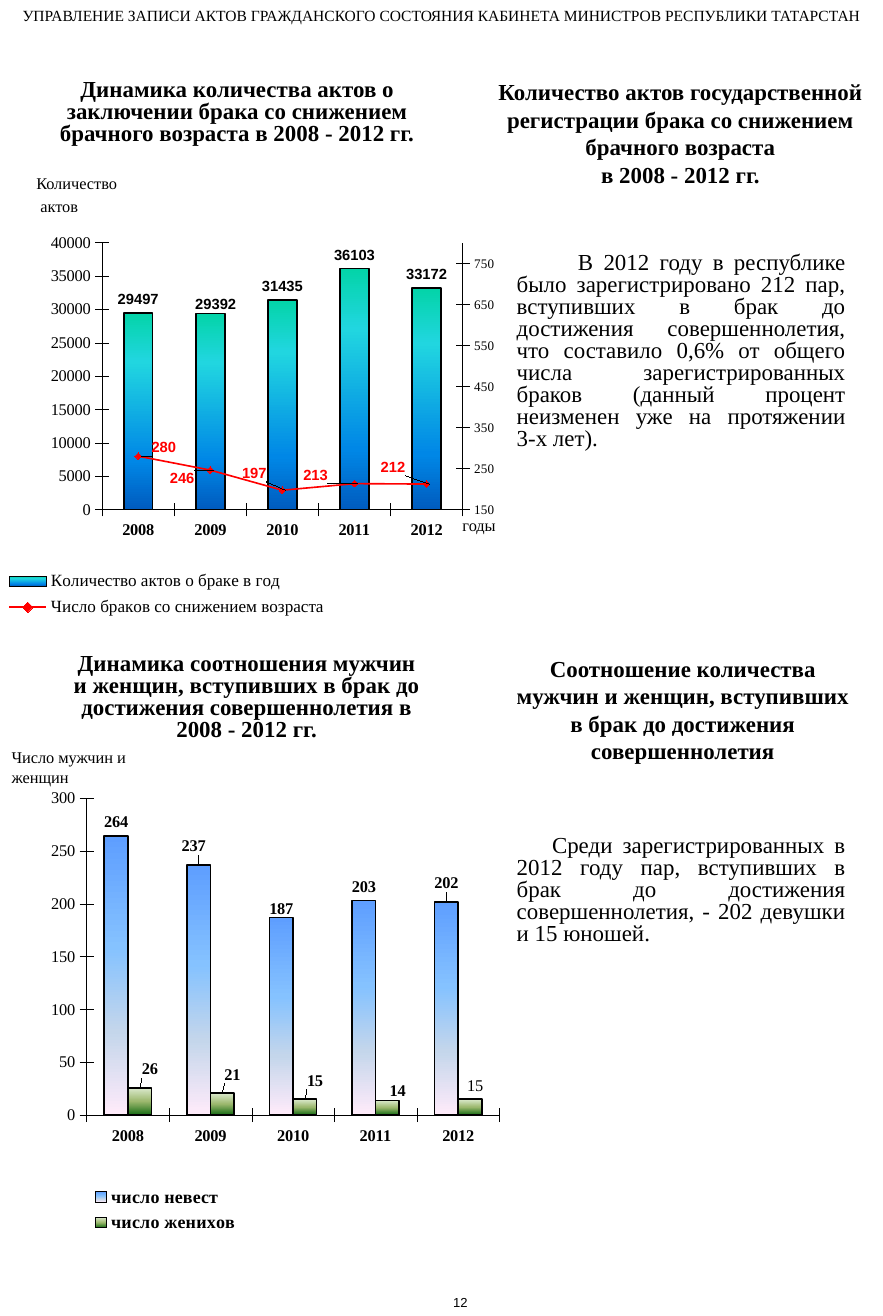
import copy

import lxml.etree
import pptx
import pptx.chart.axis
import pptx.chart.data
import pptx.dml.color
import pptx.enum.chart
import pptx.enum.text
import pptx.oxml.ns
import pptx.oxml.xmlchemy
import pptx.util

COLS, ROWS = 75, 111.8
YEARS = ["2008", "2009", "2010", "2011", "2012"]
SERIF, SANS = "Times New Roman", "Arial"
BLACK, RED = "000000", "FF0000"
ALIGN = pptx.enum.text.PP_ALIGN
SPOT = pptx.enum.chart.XL_LABEL_POSITION
qn = pptx.oxml.ns.qn


def unit(cells):
    """Turn grid cells into a length."""
    return pptx.util.Inches(cells / 10)


def paint(hue):
    """Turn a hex string into a colour."""
    return pptx.dml.color.RGBColor.from_string(hue)


def style(font, size, bold=False, face=SERIF, hue=BLACK):
    """Set size, weight, face and colour of a font."""
    font.size, font.bold, font.name = pptx.util.Pt(size), bold, face
    font.color.rgb = paint(hue)


def write(slide, box, words, size, bold=False, align=ALIGN.LEFT, space=1, gap=0, indent=0,
          face=SERIF, middle=False):
    """Place a text box whose lines share one format."""
    frame = slide.shapes.add_textbox(*map(unit, box)).text_frame
    frame.word_wrap = True
    if middle:
        frame.vertical_anchor = pptx.enum.text.MSO_ANCHOR.MIDDLE
    frame.text = words
    for row, para in enumerate(frame.paragraphs):
        para.alignment, para.line_spacing = align, space
        para.space_before = pptx.util.Pt(gap if row else 0)
        if indent:
            para._p.get_or_add_pPr().set("indent", str(unit(indent)))
        for run in para.runs:
            style(run.font, size, bold, face)


def add(node, tag, **items):
    """Append a child element with attributes."""
    return lxml.etree.SubElement(node, qn(tag), items)


def arrange(node, index, shares, inner=False, edge=True):
    """Give a chart part a manual layout in shares of the chart."""
    for old in node.findall(qn("c:layout")):
        node.remove(old)
    layout = pptx.oxml.xmlchemy.OxmlElement("c:layout")
    node.insert(index, layout)
    manual = add(layout, "c:manualLayout")
    if inner:
        add(manual, "c:layoutTarget", val="inner")
    if edge:
        add(manual, "c:xMode", val="edge")
        add(manual, "c:yMode", val="edge")
    for name, share in zip("xywh", shares):
        add(manual, "c:" + name, val=str(share))


def rule(axis, size=10, bold=False, low=None, high=None, step=None):
    """Format an axis with its font, line, ticks and scale."""
    style(axis.tick_labels.font, size, bold)
    axis.format.line.width = pptx.util.Pt(0.25)
    axis.format.line.color.rgb = paint(BLACK)
    axis.major_tick_mark = pptx.enum.chart.XL_TICK_MARK.CROSS
    axis.has_major_gridlines = False
    if step:
        axis.minimum_scale, axis.maximum_scale, axis.major_unit = low, high, step


def shade(series, node, stops):
    """Fill bars with a downward gradient and a black outline."""
    series.format.fill.gradient()
    series.format.fill.gradient_angle = 270
    ramp = node.find(qn("c:spPr")).find(".//" + qn("a:gsLst"))
    for old in list(ramp):
        ramp.remove(old)
    for share, hue in stops:
        add(add(ramp, "a:gs", pos=str(share * 1000)), "a:srgbClr", val=hue)
    series.format.line.width = pptx.util.Pt(1)
    series.format.line.color.rgb = paint(BLACK)


def label(series, node, spot, shifts, size, face=SERIF, hue=BLACK, plain=()):
    """Show values, with some labels moved by shares of the chart."""
    labels = series.data_labels
    labels.show_value, labels.position = True, spot
    style(labels.font, size, True, face, hue)
    for index, shift in shifts.items():
        tag = series.points[index].data_label
        style(tag.font, size, index not in plain, face, hue)
        tag.position = spot
    for item in node.iter(qn("c:dLbl")):
        index = int(item.find(qn("c:idx")).get("val"))
        arrange(item, 1, shifts[index], edge=False)


def plot(slide, box, data, area, key, size, bold, top, step):
    """Place a column chart and return it with its series nodes."""
    source = pptx.chart.data.CategoryChartData()
    source.categories = YEARS
    for name, values in data:
        source.add_series(name, values)
    kind = pptx.enum.chart.XL_CHART_TYPE.COLUMN_CLUSTERED
    chart = slide.shapes.add_chart(kind, *map(unit, box), source).chart
    chart.has_title, chart.has_legend = False, True
    style(chart.font, 10, face=SANS)
    chart.legend.position = pptx.enum.chart.XL_LEGEND_POSITION.BOTTOM
    chart.legend.include_in_layout = False
    style(chart.legend.font, size, bold)
    arrange(chart.element.find(".//" + qn("c:legend")), 1, key)
    arrange(chart.element.find(".//" + qn("c:plotArea")), 0, area, inner=True)
    chart.plots[0].gap_width, chart.plots[0].overlap = 150, 0
    chart.plots[0].vary_by_categories = False
    rule(chart.category_axis, bold=True)
    rule(chart.value_axis, low=0, high=top, step=step)
    return chart, chart.element.findall(".//" + qn("c:ser"))


def split(chart, node):
    """Move a series to a line on a second axis and return that axis."""
    area = chart.element.find(".//" + qn("c:plotArea"))
    bars, cat, val = (area.find(qn("c:" + t)) for t in ("barChart", "catAx", "valAx"))
    line = pptx.oxml.xmlchemy.OxmlElement("c:lineChart")
    add(line, "c:grouping", val="standard")
    add(line, "c:varyColors", val="0")
    for flag in node.findall(qn("c:invertIfNegative")):
        node.remove(flag)
    line.append(node)
    add(line, "c:marker", val="1")
    bars.addnext(line)
    cat2, val2 = copy.deepcopy(cat), copy.deepcopy(val)
    val.addnext(val2)
    val2.addnext(cat2)
    for axis, own, other in ((cat2, "1001", "1002"), (val2, "1002", "1001")):
        add(line, "c:axId", val=own)
        axis.find(qn("c:axId")).set("val", own)
        axis.find(qn("c:crossAx")).set("val", other)
    val2.find(qn("c:axPos")).set("val", "r")
    val2.find(qn("c:crosses")).set("val", "max")
    pptx.chart.axis.CategoryAxis(cat2).visible = False
    return pptx.chart.axis.ValueAxis(val2)


def acts(slide, x, y):
    """Draw the upper panel on marriages at a lowered age."""
    write(slide, (x + 3.6, y, 33.1, 6.7), "Динамика количества актов о заключении брака со снижением брачного возраста в 2008 - 2012 гг.",
          14, True, ALIGN.CENTER, 0.8)
    write(slide, (x + 40.6, y, 34.4, 10), "Количество актов государственной регистрации брака со снижением брачного возраста\vв 2008 - 2012 гг.",
          14, True, ALIGN.CENTER, middle=True)
    chart, nodes = plot(slide, (x, y + 11.8, 45.7, 36), [
        ("Количество актов о браке в год", (29497, 29392, 31435, 36103, 33172)),
        ("Число браков со снижением возраста", (280, 246, 197, 213, 212))],
        (0.19, 0.07, 0.67, 0.63), (0, 0.83, 0.62, 0.14), 10.5, False, 40000, 5000)
    rule(split(chart, nodes[1]), 8, low=150, high=800, step=100)
    bars, line = chart.plots[0].series[0], chart.plots[1].series[0]
    shade(bars, nodes[0], [(0, "03D4A8"), (25, "21D6E0"), (75, "0087E6"), (100, "005CBF")])
    label(bars, nodes[0], SPOT.OUTSIDE_END, {1: (0.01, 0.01)}, 9, SANS)
    line.smooth = False
    line.format.line.width = pptx.util.Pt(1)
    line.format.line.color.rgb = paint(RED)
    line.marker.style, line.marker.size = pptx.enum.chart.XL_MARKER_STYLE.DIAMOND, 4
    line.marker.format.fill.solid()
    line.marker.format.fill.fore_color.rgb = paint(RED)
    line.marker.format.line.color.rgb = paint(RED)
    label(line, nodes[1], SPOT.RIGHT, {0: (0.01, -0.02), 1: (-0.09, 0.02), 2: (-0.09, -0.04),
                                       3: (-0.11, -0.02), 4: (-0.1, -0.04)}, 9, SANS, RED)
    write(slide, (x + 2.1, y + 7.9, 12.8, 4.7), "Количество\n актов", 10, gap=2)
    write(slide, (x + 38.3, y + 37, 8.5, 2.7), "годы", 10)
    write(slide, (x + 42.9, y + 14.7, 29.9, 18), "В 2012 году в республике было зарегистрировано 212 пар, вступивших в брак до достижения совершеннолетия, что составило 0,6% от общего числа зарегистрированных браков (данный процент неизменен уже на протяжении\v3-х лет).",
          14, align=ALIGN.JUSTIFY, space=0.8, indent=5.2)


def pairs(slide, x, y):
    """Draw the lower panel on brides and grooms."""
    write(slide, (x + 5.2, y, 31.5, 8.5), "Динамика соотношения мужчин и женщин, вступивших в брак до достижения совершеннолетия в 2008 - 2012 гг.",
          14, True, ALIGN.CENTER, 0.8)
    write(slide, (x + 42.2, y, 31.6, 10.4), "Соотношение количества мужчин и женщин, вступивших в брак до достижения совершеннолетия",
          14, True, ALIGN.CENTER)
    chart, nodes = plot(slide, (x, y + 10.3, 43.3, 40.2), [
        ("число невест", (264, 237, 187, 203, 202)), ("число женихов", (26, 21, 15, 14, 15))],
        (0.17, 0.06, 0.81, 0.67), (0.17, 0.87, 0.31, 0.12), 11, True, 300, 50)
    brides, grooms = chart.plots[0].series
    shade(brides, nodes[0], [(0, "5E9EFF"), (40, "85C2FF"), (70, "C4D6EB"), (100, "FFEBFA")])
    shade(grooms, nodes[1], [(0, "DDEBCF"), (50, "9CB86E"), (100, "156B13")])
    label(brides, nodes[0], SPOT.OUTSIDE_END, {1: (-0.01, -0.01), 2: (0, 0.01), 4: (0, -0.01)}, 10)
    label(grooms, nodes[1], SPOT.OUTSIDE_END, {0: (0.02, -0.01), 1: (0.02, -0.01), 2: (0.02, -0.01),
                                               3: (0.02, 0.01), 4: (0.01, 0)}, 10, plain=(4,))
    write(slide, (x, y + 7.9, 15, 4.4), "Число мужчин и женщин", 10)
    write(slide, (x + 42.9, y + 15.4, 29.9, 10), "Среди зарегистрированных в 2012 году пар, вступивших в брак до достижения совершеннолетия, - 202 девушки\vи 15 юношей.",
          14, align=ALIGN.JUSTIFY, space=0.8, indent=3)


def main():
    """Build and save the slide."""
    deck = pptx.Presentation()
    deck.slide_width, deck.slide_height = unit(COLS), unit(ROWS)
    slide = deck.slides.add_slide(deck.slide_layouts[6])
    write(slide, (0, 0, COLS, 2.6), "УПРАВЛЕНИЕ ЗАПИСИ АКТОВ ГРАЖДАНСКОГО СОСТОЯНИЯ КАБИНЕТА МИНИСТРОВ РЕСПУБЛИКИ ТАТАРСТАН",
          9.5, align=ALIGN.CENTER)
    acts(slide, 0, 6.3)
    pairs(slide, 0, 55.1)
    write(slide, (COLS / 2, ROWS - 2.3, 3.9, 2.3), "12", 8, face=SANS)
    deck.save("out.pptx")


if __name__ == "__main__":
    main()
